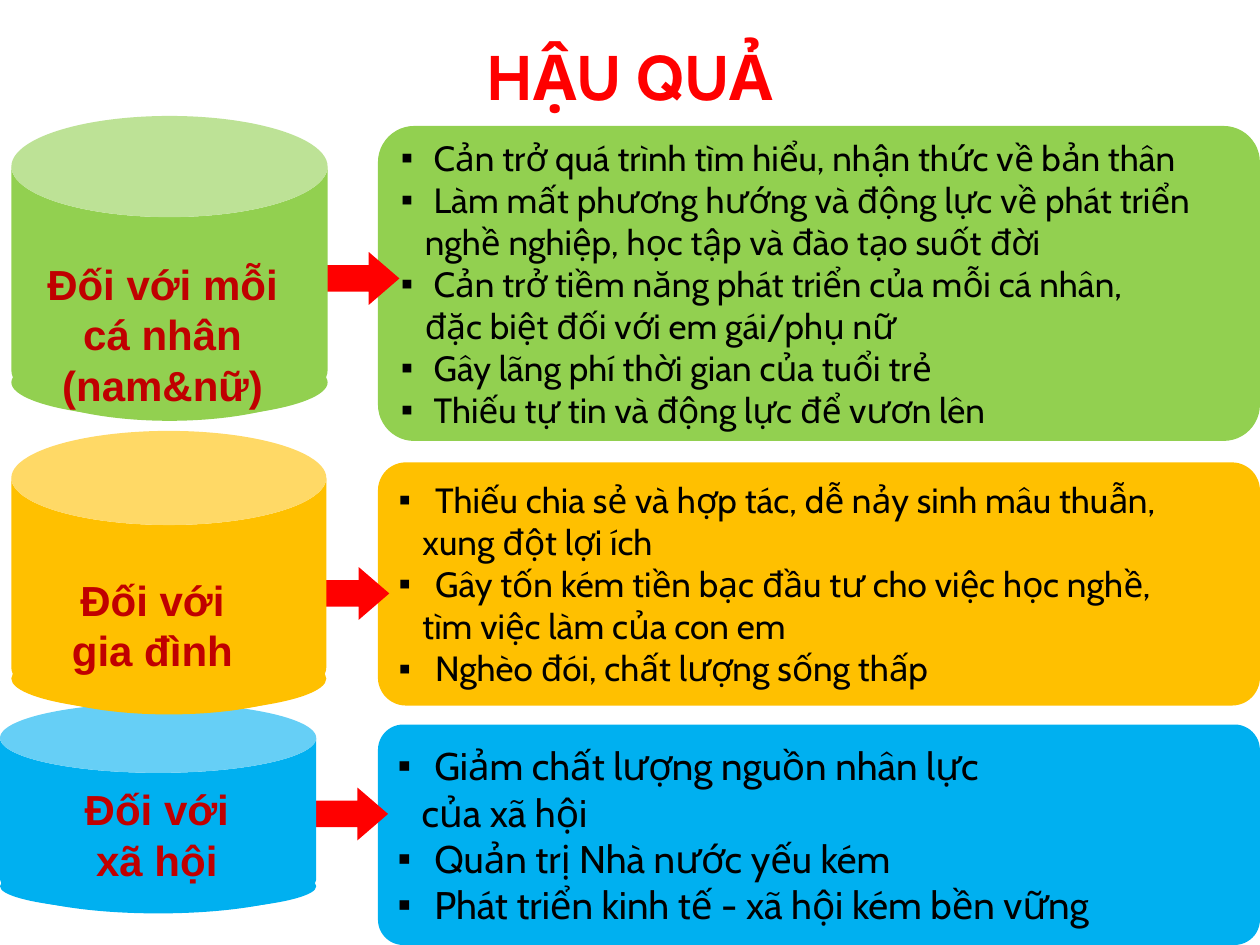
import pptx
import pptx.util
import pptx.dml.color
import pptx.enum.shapes
import pptx.enum.text
import pptx.oxml.ns
from lxml import etree

Inches = pptx.util.Inches
Kind = pptx.enum.shapes.MSO_SHAPE
Align = pptx.enum.text.PP_ALIGN
Anchor = pptx.enum.text.MSO_ANCHOR

ROWS = [
    dict(fill="92D050", panel=(3, 1, 7, 2.5), arrow=(2.59, 2), can=(0.09, 0.92, 2.51, 2.42),
         label=(0.08, 2, 2.42, 1.31), name="Đối với mỗi cá nhân (nam&nữ)", size=20, hang=0.26,
         points=["Cản trở quá trình tìm hiểu, nhận thức về bản thân",
                 "Làm mất phương hướng và động lực về phát triển\nnghề nghiệp, học tập và đào tạo suốt đời",
                 "Cản trở tiềm năng phát triển của mỗi cá nhân,\nđặc biệt đối với em gái/phụ nữ",
                 "Gây lãng phí thời gian của tuổi trẻ",
                 "Thiếu tự tin và động lực để vươn lên"]),
    dict(fill="FFC000", panel=(3, 3.67, 7, 1.93), arrow=(2.51, 4.5), can=(0.09, 3.42, 2.5, 2.25),
         label=(0.17, 4.51, 2.08, 0.91), name="Đối với\ngia đình", size=20, hang=0.29,
         points=["Thiếu chia sẻ và hợp tác, dễ nảy sinh mâu thuẫn,\nxung đột lợi ích",
                 "Gây tốn kém tiền bạc đầu tư cho việc học nghề,\ntìm việc làm của con em",
                 "Nghèo đói, chất lượng sống thấp"]),
    dict(fill="00B0F0", panel=(3, 5.75, 7, 1.75), arrow=(2.5, 6.25), can=(0, 5.58, 2.51, 1.67),
         label=(0.33, 6.17, 1.83, 0.91), name="Đối với\nxã hội", size=22, hang=0.29,
         points=["Giảm chất lượng nguồn nhân lực\ncủa xã hội",
                 "Quản trị Nhà nước yếu kém",
                 "Phát triển kinh tế - xã hội kém bền vững"]),
]


def color(code):
    return pptx.dml.color.RGBColor.from_string(code)


def add_form(slide, kind, box, fill, *adjust):
    form = slide.shapes.add_shape(kind, *map(Inches, box))
    form.shadow.inherit = False
    form.fill.solid()
    form.fill.fore_color.rgb = color(fill)
    form.line.fill.background()
    for spot, value in enumerate(adjust):
        form.adjustments[spot] = value
    return form


def style(para, font, size, code, bold=False):
    for run in para.runs:
        run.font.name = font
        run.font.size = pptx.util.Pt(size)
        run.font.bold = bold
        run.font.color.rgb = color(code)


def set_indent(para, left, first, bullet):
    props = para._p.get_or_add_pPr()
    props.set("marL", str(Inches(left)))
    props.set("indent", str(Inches(first)))
    if bullet:
        font = etree.SubElement(props, pptx.oxml.ns.qn("a:buFont"))
        font.set("typeface", "Arial")
        mark = etree.SubElement(props, pptx.oxml.ns.qn("a:buChar"))
        mark.set("char", "▪")
    else:
        etree.SubElement(props, pptx.oxml.ns.qn("a:buNone"))


def add_panel(slide, box, fill, points, size, hang):
    frame = add_form(slide, Kind.ROUNDED_RECTANGLE, box, fill, 0.115).text_frame
    frame.word_wrap = True
    frame.vertical_anchor = Anchor.MIDDLE
    lines = [(text, spot == 0) for point in points
             for spot, text in enumerate(point.split("\n"))]
    frame.text = "\n".join(text for text, _ in lines)
    for para, (_, lead) in zip(frame.paragraphs, lines):
        para.alignment = Align.LEFT
        set_indent(para, hang if lead else 0.19, -hang if lead else 0, lead)
        style(para, "Cabin", size, "000000")


def add_can(slide, box, fill):
    left, top, width, height = box
    base = height * 0.235
    add_form(slide, Kind.OVAL, (left, top + height - base - 0.02, width, base), fill)
    add_form(slide, Kind.CAN, box, fill, 0.332)


def add_text(slide, box, text, font, size, code, anchor):
    frame = slide.shapes.add_textbox(*map(Inches, box)).text_frame
    frame.word_wrap = True
    frame.vertical_anchor = anchor
    frame.text = text
    for para in frame.paragraphs:
        para.alignment = Align.CENTER
        style(para, font, size, code, True)


def main():
    deck = pptx.Presentation()
    deck.slide_width, deck.slide_height = Inches(10), Inches(7.5)
    slide = deck.slides.add_slide(deck.slide_layouts[6])
    for row in ROWS:
        add_panel(slide, row["panel"], row["fill"], row["points"], row["size"], row["hang"])
    for row in ROWS:
        add_form(slide, Kind.RIGHT_ARROW, (*row["arrow"], 0.58, 0.42), "FF0000", 0.5, 0.58)
    add_text(slide, (0, 0.25, 10, 0.7), "HẬU QUẢ", "Cabin", 36, "FF0000", Anchor.MIDDLE)
    for row in reversed(ROWS):
        add_can(slide, row["can"], row["fill"])
    for row in ROWS:
        add_text(slide, row["label"], row["name"], "Arial", 24, "C00000", Anchor.TOP)
    deck.save("out.pptx")


if __name__ == "__main__":
    main()
